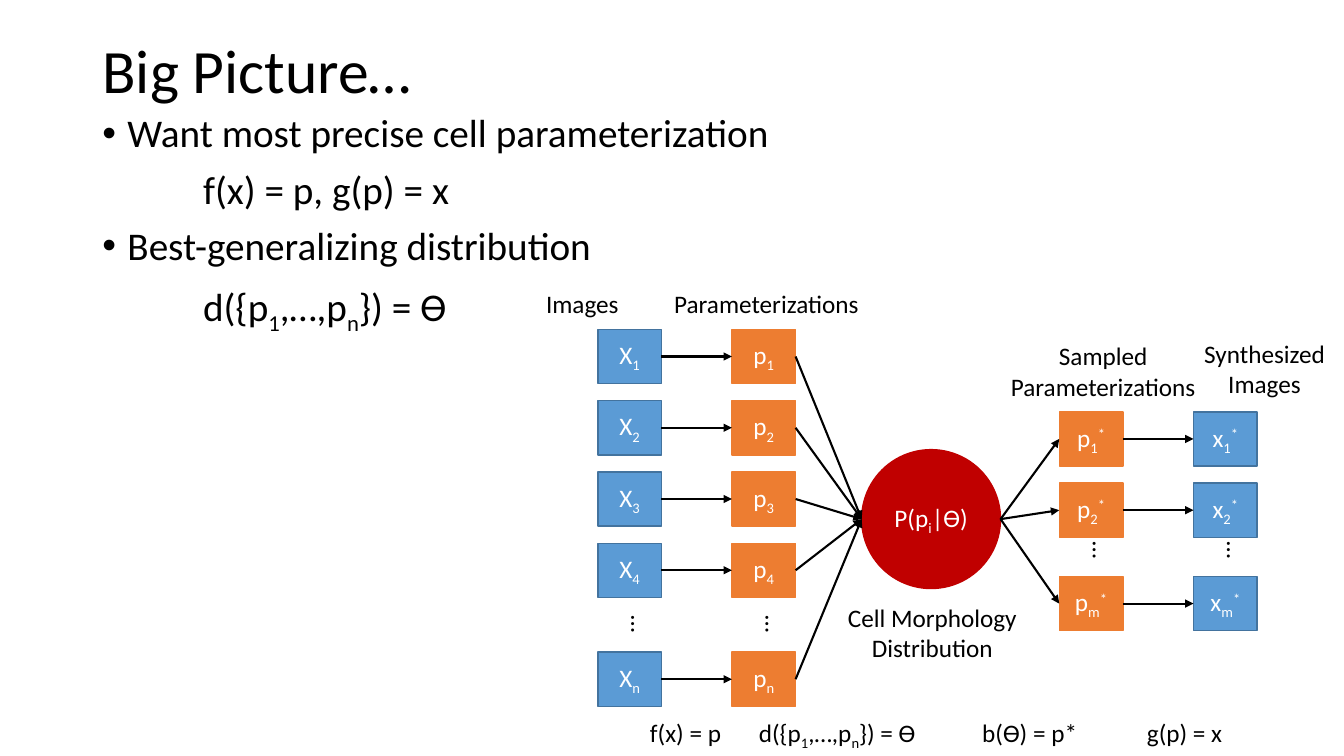
from dataclasses import dataclass

from lxml import etree
from pptx import Presentation
from pptx.dml.color import RGBColor
from pptx.enum.shapes import MSO_CONNECTOR, MSO_SHAPE
from pptx.enum.text import MSO_ANCHOR, MSO_AUTO_SIZE, PP_ALIGN
from pptx.oxml.ns import qn
from pptx.util import Pt

RECTANGLE, OVAL = MSO_SHAPE.RECTANGLE, MSO_SHAPE.OVAL
STRAIGHT = MSO_CONNECTOR.STRAIGHT
LEFT, CENTER = PP_ALIGN.LEFT, PP_ALIGN.CENTER
TOP, MIDDLE = MSO_ANCHOR.TOP, MSO_ANCHOR.MIDDLE
NO_FIT, GROW = MSO_AUTO_SIZE.NONE, MSO_AUTO_SIZE.SHAPE_TO_FIT_TEXT

BLACK = RGBColor(0x00, 0x00, 0x00)
WHITE = RGBColor(0xFF, 0xFF, 0xFF)
BLUE = RGBColor(0x5B, 0x9B, 0xD5)
DARK_BLUE = RGBColor(0x43, 0x73, 0x9E)
ORANGE = RGBColor(0xED, 0x7D, 0x31)
RED = RGBColor(0xC0, 0x00, 0x00)

FONT = "Calibri"
SUBSCRIPT, SUPERSCRIPT = "-25000", "30000"
LEFT_SIDE, RIGHT_SIDE = 1, 3
NODE_WIDTH, NODE_HEIGHT = 45.5, 38.7
ROW_PITCH = 50.9
DISTRIBUTION_LEFT, DISTRIBUTION_TOP, DISTRIBUTION_SIZE = 615.5, 321.2, 99.2
LABEL_HEIGHT, LABEL_LINE = 29.1, 21.8


@dataclass(frozen=True)
class Column:
    left: float
    letter: str
    fill: RGBColor
    outline: RGBColor


@dataclass(frozen=True)
class Stage:
    top: float
    last_top: float
    dots_top: float
    indices: str
    suffix: str
    columns: tuple[Column, Column]


@dataclass(frozen=True)
class Label:
    left: float
    top: float
    width: float
    lines: tuple[str, ...]
    align: PP_ALIGN = CENTER
    rotation: float = 0


@dataclass(frozen=True)
class Point:
    text: str
    bulleted: bool


TRAINING = Stage(235.3, 465.8, 432, "1234n", "", (
    Column(427, "X", BLUE, DARK_BLUE), Column(522.8, "p", ORANGE, ORANGE)))
SAMPLING = Stage(294.2, 411.8, 378.7, "12m", "^*", (
    Column(756.6, "p", ORANGE, ORANGE), Column(852.5, "x", BLUE, DARK_BLUE)))

LABELS = (
    Label(383, 202.5, 67, ("Images",), LEFT),
    Label(474.5, 202.5, 147.6, ("Parameterizations",), LEFT),
    Label(597.6, 426.5, 136.8, ("Cell Morphology", "Distribution")),
    Label(714.2, 239.8, 147.6, ("Sampled", "Parameterizations")),
    Label(852.5, 238.3, 101.5, ("Synthesized", "Images")),
    Label(457.2, 508.5, 65.5, ("f(x) = p",), LEFT),
    Label(533.5, 508.5, 128.9, ("d({p_1,…,p_n}) = Ɵ",)),
    Label(694.1, 508.5, 82.8, ("b(Ɵ) = p*",)),
    Label(812.2, 508.5, 69.1, ("g(p) = x",), LEFT),
)

POINTS = (
    Point("Want most precise cell parameterization", True),
    Point("f(x) = p, g(p) = x", False),
    Point("Best-generalizing distribution", True),
    Point("d({p_1,…,p_n}) = Ɵ", False),
)


def add_span(para, text: str, baseline: str | None = None) -> None:
    if text:
        span = para.add_run()
        span.text = text
        if baseline:
            span._r.get_or_add_rPr().set("baseline", baseline)


def write(para, text: str, size: float, color: RGBColor, align=LEFT) -> None:
    """Write text in which _ lowers and ^ raises the next character."""
    para.alignment = align
    para.font.name, para.font.size = FONT, Pt(size)
    para.font.color.rgb = color
    plain, *pieces = text.replace("^", "_^").split("_")
    add_span(para, plain)
    for piece in pieces:
        baseline = SUPERSCRIPT if piece.startswith("^") else SUBSCRIPT
        piece = piece.removeprefix("^")
        add_span(para, piece[0], baseline)
        add_span(para, piece[1:])


def write_lines(frame, lines, size: float, color: RGBColor, align=LEFT) -> list:
    paras = [frame.paragraphs[0]] + [frame.add_paragraph() for _ in lines[1:]]
    for para, line in zip(paras, lines):
        write(para, line, size, color, align)
    return paras


def add_node(page, kind, left: float, top: float, width: float, height: float,
             text: str, fill: RGBColor, outline: RGBColor):
    node = page.shapes.add_shape(kind, Pt(left), Pt(top), Pt(width), Pt(height))
    node.shadow.inherit = False
    node.fill.solid()
    node.fill.fore_color.rgb = fill
    node.line.color.rgb = outline
    node.line.width = Pt(1)
    node.text_frame.vertical_anchor = MIDDLE
    write(node.text_frame.paragraphs[0], text, 18, WHITE, CENTER)
    return node


def add_arrow(page, start=None, end=None) -> None:
    middle = Pt(DISTRIBUTION_TOP + DISTRIBUTION_SIZE / 2)
    arrow = page.shapes.add_connector(
        STRAIGHT, Pt(DISTRIBUTION_LEFT + DISTRIBUTION_SIZE), middle,
        Pt(DISTRIBUTION_LEFT), middle)
    if start is not None:
        arrow.begin_connect(start, RIGHT_SIDE)
    if end is not None:
        arrow.end_connect(end, LEFT_SIDE)
    arrow.line.color.rgb = BLACK
    arrow.line.width = Pt(1.5)
    etree.SubElement(arrow.line._get_or_add_ln(), qn("a:tailEnd"), type="triangle")
    etree.SubElement(arrow._element.spPr, qn("a:effectLst"))


def add_label(page, label: Label) -> None:
    height = LABEL_HEIGHT + LABEL_LINE * (len(label.lines) - 1)
    box = page.shapes.add_textbox(
        Pt(label.left), Pt(label.top), Pt(label.width), Pt(height))
    box.rotation = label.rotation
    box.text_frame.word_wrap = False
    box.text_frame.auto_size = GROW
    write_lines(box.text_frame, label.lines, 18, BLACK, label.align)


def add_stage(page, stage: Stage) -> list[list]:
    tops = [stage.top + ROW_PITCH * row for row in range(len(stage.indices) - 1)]
    tops.append(stage.last_top)
    columns = []
    for column in stage.columns:
        columns.append([
            add_node(page, RECTANGLE, column.left, top, NODE_WIDTH, NODE_HEIGHT,
                     f"{column.letter}_{index}{stage.suffix}",
                     column.fill, column.outline)
            for index, top in zip(stage.indices, tops)])
        add_label(page, Label(column.left + 17.3, stage.dots_top, 27.4,
                              ("…",), LEFT, 90))
    for start, end in zip(*columns):
        add_arrow(page, start, end)
    return columns


def add_title(page) -> None:
    title = page.shapes.title
    title.left, title.top, title.width, title.height = Pt(66), Pt(0), Pt(828), Pt(104.4)
    title.text_frame.vertical_anchor = MIDDLE
    title.text_frame.auto_size = NO_FIT
    para = title.text_frame.paragraphs[0]
    write(para, "Big Picture…", 44, BLACK)
    para.line_spacing = 0.9


def add_points(page) -> None:
    box = page.shapes.add_textbox(Pt(66), Pt(77.8), Pt(828), Pt(342.7))
    box.text_frame.word_wrap = True
    box.text_frame.vertical_anchor = TOP
    paras = write_lines(box.text_frame, [point.text for point in POINTS], 28, BLACK)
    for para, point in zip(paras, POINTS):
        para.line_spacing = 0.9
        para.space_before = Pt(10)
        properties = para._p.get_or_add_pPr()
        properties.set("marL", str(Pt(18 if point.bulleted else 72)))
        properties.set("indent", str(Pt(-18 if point.bulleted else 0)))
        if point.bulleted:
            font = etree.Element(qn("a:buFont"), typeface="Arial")
            bullet = etree.Element(qn("a:buChar"), char="•")
            defaults = properties.find(qn("a:defRPr"))
            defaults.addprevious(font)
            defaults.addprevious(bullet)


def main() -> None:
    deck = Presentation()
    deck.slide_width, deck.slide_height = Pt(960), Pt(540)
    page = deck.slides.add_slide(deck.slide_layouts.get_by_name("Title Only"))
    add_title(page)
    add_points(page)
    _, parameters = add_stage(page, TRAINING)
    samples, _ = add_stage(page, SAMPLING)
    add_node(page, OVAL, DISTRIBUTION_LEFT, DISTRIBUTION_TOP, DISTRIBUTION_SIZE,
             DISTRIBUTION_SIZE, "P(p_i|Ɵ)", RED, RED)
    for parameter in parameters:
        add_arrow(page, start=parameter)
    for sample in samples:
        add_arrow(page, end=sample)
    for label in LABELS:
        add_label(page, label)
    deck.save("out.pptx")


if __name__ == "__main__":
    main()
